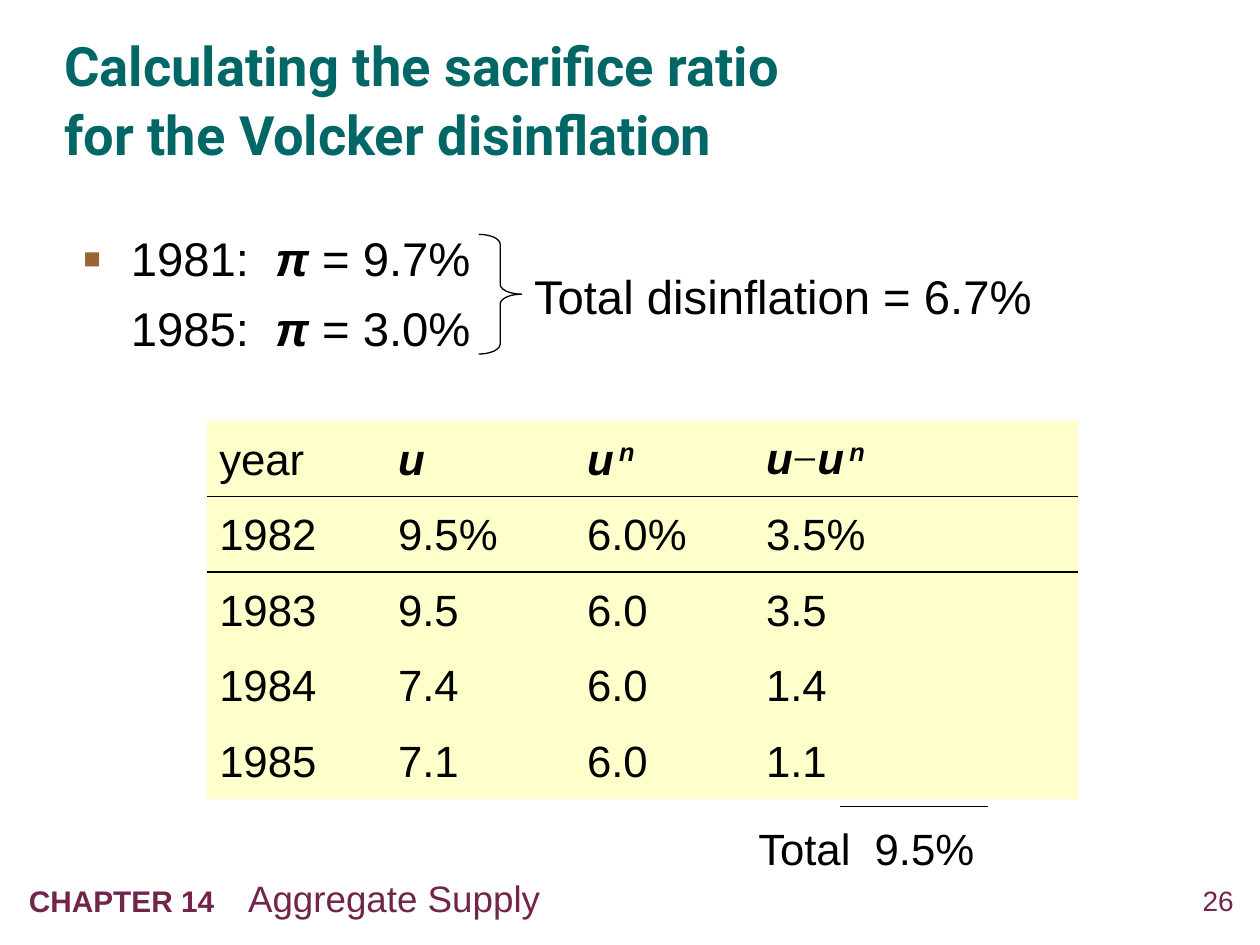
"""Build the slide that works out the sacrifice ratio of the Volcker disinflation."""
from lxml import etree
from pptx import Presentation
from pptx.dml.color import RGBColor
from pptx.enum import shapes, text
from pptx.oxml import ns
from pptx.util import Inches, Pt

BLACK, TEAL, PLUM, BROWN, CREAM = "000000", "006666", "71254B", "996633", "FFFFCC"
NO_STYLE = "{2D5ABB26-0587-4C30-8999-92F81FD0307C}"
VARIABLE = {"bold": True, "italic": True}
NATURAL = [("u", VARIABLE), (" ", {"size": 11, **VARIABLE}), ("n", {"raised": True, **VARIABLE})]

TITLE = "Calculating the sacrifice ratio \vfor the Volcker disinflation"
INFLATION = [("1981:  ", "= 9.7%"), ("1985:  ", "= 3.0%")]
HEADINGS = [
    [("year", {})],
    [("u", VARIABLE)],
    NATURAL,
    [("u", VARIABLE), ("−", {"font": "Times New Roman"}), *NATURAL],
]
UNEMPLOYMENT = [
    ("1982", "9.5%", "6.0%", "3.5%"),
    ("1983", "9.5", "6.0", "3.5"),
    ("1984", "7.4", "6.0", "1.4"),
    ("1985", "7.1", "6.0", "1.1"),
]
COLUMN_WIDTHS = (1.42, 1.5, 1.42, 2.58)
ROW_HEIGHT = 0.6


def rgb(value):
    return RGBColor.from_string(value)


def add_xml(parent, tag, **attributes):
    return etree.SubElement(parent, ns.qn(tag), attributes)


def write(paragraph, pieces, size, color=BLACK, spacing=None, before=0):
    paragraph.line_spacing = spacing
    paragraph.space_before = Pt(before)
    for words, style in pieces:
        first = len(paragraph.runs)
        if "\v" in words:
            paragraph.text = words
        else:
            paragraph.add_run().text = words
        for run in paragraph.runs[first:]:
            font = run.font
            font.name = style.get("font", "Arial")
            font.size = Pt(style.get("size", size))
            font.bold = style.get("bold", False)
            font.italic = style.get("italic", False)
            font.color.rgb = rgb(color)
            if style.get("raised"):
                font._element.set("baseline", "30000")


def add_text(slide, box, pieces, size, inset=True, **look):
    frame = slide.shapes.add_textbox(*map(Inches, box)).text_frame
    frame.word_wrap = True
    if not inset:
        frame.margin_left = frame.margin_right = frame.margin_top = frame.margin_bottom = 0
    write(frame.paragraphs[0], pieces, size, **look)
    return frame


def add_inflation(slide):
    frame = add_text(slide, (0.56, 1.75, 4.18, 1.14), [], 27)
    for index, (year, rate) in enumerate(INFLATION):
        paragraph = frame.add_paragraph() if index else frame.paragraphs[0]
        pieces = [(year, {}), ("π ", VARIABLE), (rate, {})]
        write(paragraph, pieces, 27, spacing=1.05, before=6 * index)
        properties = paragraph._p.get_or_add_pPr()
        properties.set("marL", str(Inches(0.38)))
        if index == 0:
            properties.set("indent", str(Inches(-0.38)))
            add_xml(add_xml(properties, "a:buClr"), "a:srgbClr", val=BROWN)
            add_xml(properties, "a:buSzPct", val="120000")
            add_xml(properties, "a:buFont", typeface="Arial")
            add_xml(properties, "a:buChar", char="▪")


def add_rule(cell, side):
    rule = etree.Element(ns.qn(side), w=str(Pt(1)))
    add_xml(add_xml(rule, "a:solidFill"), "a:srgbClr", val=BLACK)
    cell._tc.get_or_add_tcPr().insert(0, rule)


def add_unemployment(slide):
    rows = [HEADINGS] + [[[(value, {})] for value in row] for row in UNEMPLOYMENT]
    size = (sum(COLUMN_WIDTHS), ROW_HEIGHT * len(rows))
    table = slide.shapes.add_table(
        len(rows), len(COLUMN_WIDTHS), *map(Inches, (1.64, 3.34, *size))
    ).table
    table.first_row = table.horz_banding = False
    table._tbl.tblPr.find(ns.qn("a:tableStyleId")).text = NO_STYLE
    for column, width in zip(table.columns, COLUMN_WIDTHS):
        column.width = Inches(width)
    for r, row in enumerate(rows):
        for c, pieces in enumerate(row):
            cell = table.cell(r, c)
            cell.vertical_anchor = text.MSO_ANCHOR.MIDDLE
            cell.fill.solid()
            cell.fill.fore_color.rgb = rgb(CREAM)
            write(cell.text_frame.paragraphs[0], pieces, 25, spacing=1.05)
            if r < 2:
                add_rule(cell, ("a:lnB", "a:lnT")[r])


def draw_outline(shape):
    shape.line.color.rgb = rgb(BLACK)
    shape.line.width = Pt(0.75)


def add_footer(slide):
    add_text(slide, (9.24, 7.01, 0.55, 0.32), [("26", {})], 16, inset=False,
             color=PLUM).paragraphs[0].alignment = text.PP_ALIGN.RIGHT
    pieces = [("CHAPTER 14", {"size": 17, "bold": True}), ("\t", {}), ("Aggregate Supply", {})]
    footer = add_text(slide, (0.13, 6.9, 8.18, 0.45), pieces, 21, color=PLUM)
    tabs = add_xml(footer.paragraphs[0]._p.get_or_add_pPr(), "a:tabLst")
    add_xml(tabs, "a:tab", pos=str(Inches(1.74)), algn="l")


def main():
    deck = Presentation()
    deck.slide_width, deck.slide_height = Inches(10), Inches(7.5)
    slide = deck.slides.add_slide(deck.slide_layouts[6])

    add_footer(slide)
    title = add_text(slide, (0.51, 0.26, 9.02, 1.03),
                     [(TITLE, {"font": "Roboto", "bold": True})], 31,
                     inset=False, color=TEAL, spacing=1.05)
    title.vertical_anchor = text.MSO_ANCHOR.MIDDLE
    add_inflation(slide)
    add_unemployment(slide)

    add_text(slide, (5.92, 6.47, 2.17, 0.52), [("Total  9.5%", {})], 25)
    sum_line = slide.shapes.add_connector(
        shapes.MSO_CONNECTOR.STRAIGHT, *map(Inches, (6.67, 6.4, 7.84, 6.4)))
    draw_outline(sum_line)
    add_xml(sum_line._element.spPr, "a:effectLst")

    add_text(slide, (4.14, 2.07, 4.33, 0.55), [("Total disinflation = 6.7%", {})], 27)
    brace = slide.shapes.add_shape(
        shapes.MSO_SHAPE.RIGHT_BRACE, *map(Inches, (3.8, 1.86, 0.34, 0.95)))
    brace.adjustments[0], brace.adjustments[1] = 0.23, 0.5
    brace.fill.background()
    brace.shadow.inherit = False
    draw_outline(brace)

    deck.save("out.pptx")


if __name__ == "__main__":
    main()
